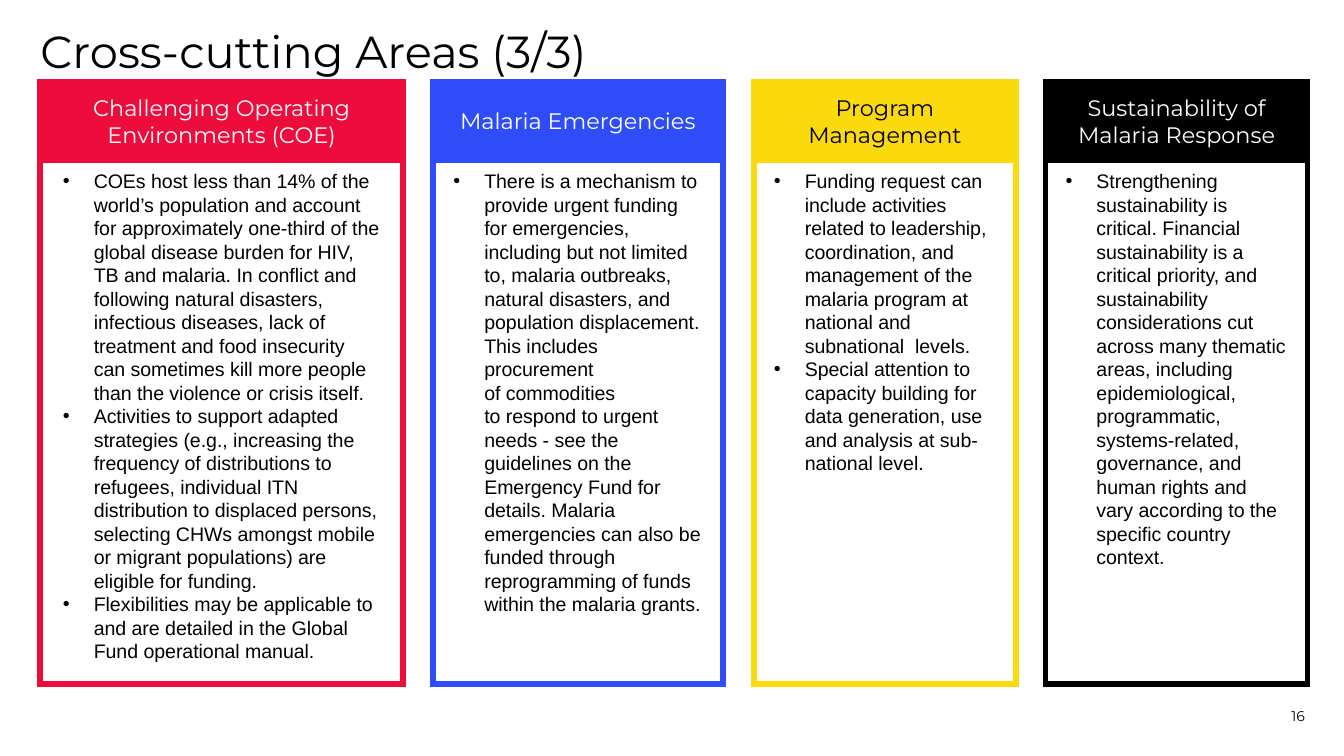
from pptx import Presentation
from pptx.dml.color import RGBColor
from pptx.enum.shapes import MSO_SHAPE as SHAPE
from pptx.enum.text import MSO_ANCHOR as ANCHOR, MSO_AUTO_SIZE as AUTO_SIZE, PP_ALIGN as ALIGN
from pptx.oxml.ns import qn
from pptx.util import Inches, Pt
from lxml import etree

COLORS = {"red": "EE0C3D", "blue": "2E4DF9", "yellow": "FAD90D", "black": "000000", "white": "FFFFFF"}
TOP, HEADER_HEIGHT, COLUMN_HEIGHT = 0.61, 0.58, 4.48
BODY_TOP, BULLET_INDENT = 1.21, 0.23
NO_BREAK_SPACE = chr(160)  # written as ~ in the texts below

# left, width, body width, body height, color, header color, header, bullets
COLUMNS = [
    (0.3, 2.7, 2.56, 3.99, "red", "white", "Challenging Operating Environments (COE)", [
        "COEs host less than 14% of the world’s population and account for approximately "
        "one-third of the global disease burden for HIV, TB and malaria.~In conflict and "
        "following natural disasters, infectious diseases, lack of treatment and food "
        "insecurity can sometimes kill more people than~the violence or crisis itself.",
        "Activities to~support~adapted strategies (e.g., increasing the frequency of "
        "distributions to refugees, individual ITN distribution to displaced persons, "
        "selecting CHWs amongst mobile or migrant populations)~are eligible for funding.",
        "Flexibilities may be applicable to and are detailed in the Global Fund "
        "operational~manual.",
    ]),
    (3.22, 2.16, 2.05, 3.64, "blue", "white", "Malaria Emergencies", [
        "There is a mechanism to provide urgent funding for emergencies, including but not "
        "limited to, malaria outbreaks, natural disasters, and population displacement. "
        "This includes procurement of~commodities to~respond to urgent needs - see the "
        "guidelines on the Emergency Fund for details. Malaria emergencies can also be "
        "funded through reprogramming of funds within the malaria grants.",
    ]),
    (5.61, 1.95, 1.85, 2.4, "yellow", "black", "Program Management", [
        "Funding request can include activities related to leadership, coordination, and "
        "management of the malaria program at national and subnational~ levels.",
        "Special attention to capacity building for data generation, use and analysis at "
        "sub-national level.",
    ]),
    (7.78, 1.95, 1.85, 3.28, "black", "white", "Sustainability of Malaria Response", [
        "Strengthening sustainability is critical. Financial sustainability is a critical "
        "priority, and sustainability considerations cut across many thematic areas, "
        "including epidemiological, programmatic, systems-related, governance, and human "
        "rights and vary according to the specific country context.",
    ]),
]


def write(para, text, size, font="Montserrat", color="black", align=ALIGN.LEFT):
    para.text = text.replace("~", NO_BREAK_SPACE)
    para.alignment = align
    for span in para.runs:
        span.font.size = Pt(size)
        span.font.name = font
        span.font.color.rgb = RGBColor.from_string(COLORS[color])


def add_rectangle(shapes, left, width, height, color):
    """Add a column rectangle with a square-cornered outline."""
    rectangle = shapes.add_shape(SHAPE.RECTANGLE, Inches(left), Inches(TOP),
                                 Inches(width), Inches(height))
    rectangle.shadow.inherit = False
    rectangle.line.color.rgb = RGBColor.from_string(COLORS[color])
    rectangle.line.width = Pt(3)
    outline = rectangle._element.spPr.find(qn("a:ln"))
    etree.SubElement(outline, qn("a:miter")).set("lim", "800000")
    return rectangle


deck = Presentation()
deck.slide_width = Inches(10)
deck.slide_height = deck.slide_width * 9 // 16
page = deck.slides.add_slide(deck.slide_layouts[5])

title = page.shapes.title
title.left, title.top, title.width, title.height = map(Inches, (0.3, 0.22, 9.41, 0.38))
number = page.shapes.add_textbox(*map(Inches, (8.97, 5.09, 0.74, 0.3)))
for box, anchor in ((title, ANCHOR.TOP), (number, ANCHOR.BOTTOM)):
    frame = box.text_frame
    frame.margin_left = frame.margin_top = frame.margin_right = frame.margin_bottom = 0
    frame.word_wrap = True
    frame.vertical_anchor = anchor
write(title.text_frame.paragraphs[0], "Cross-cutting Areas (3/3)", 24)
title.text_frame.paragraphs[0].line_spacing = 0.9
write(number.text_frame.paragraphs[0], "16", 7.5, align=ALIGN.RIGHT)

for left, width, body_width, body_height, color, header_color, heading, bullets in COLUMNS:
    shapes = page.shapes.add_group_shape().shapes

    header = add_rectangle(shapes, left, width, HEADER_HEIGHT, color)
    header.fill.solid()
    header.fill.fore_color.rgb = RGBColor.from_string(COLORS[color])
    header.text_frame.vertical_anchor = ANCHOR.MIDDLE
    write(header.text_frame.paragraphs[0], heading, 12, color=header_color, align=ALIGN.CENTER)

    body = shapes.add_textbox(Inches(left + (width - body_width) / 2), Inches(BODY_TOP),
                              Inches(body_width), Inches(body_height))
    frame = body.text_frame
    frame.word_wrap = True
    frame.auto_size = AUTO_SIZE.SHAPE_TO_FIT_TEXT
    for index, bullet in enumerate(bullets):
        para = frame.add_paragraph() if index else frame.paragraphs[0]
        write(para, bullet, 10.5, font="Arial")
        properties = para._p.get_or_add_pPr()
        properties.set("marL", str(Inches(BULLET_INDENT)))
        properties.set("indent", str(-Inches(BULLET_INDENT)))
        etree.SubElement(properties, qn("a:buFont")).set("typeface", "Arial")
        etree.SubElement(properties, qn("a:buChar")).set("char", "•")

    border = add_rectangle(shapes, left, width, COLUMN_HEIGHT, color)
    border.fill.background()

deck.save("out.pptx")
